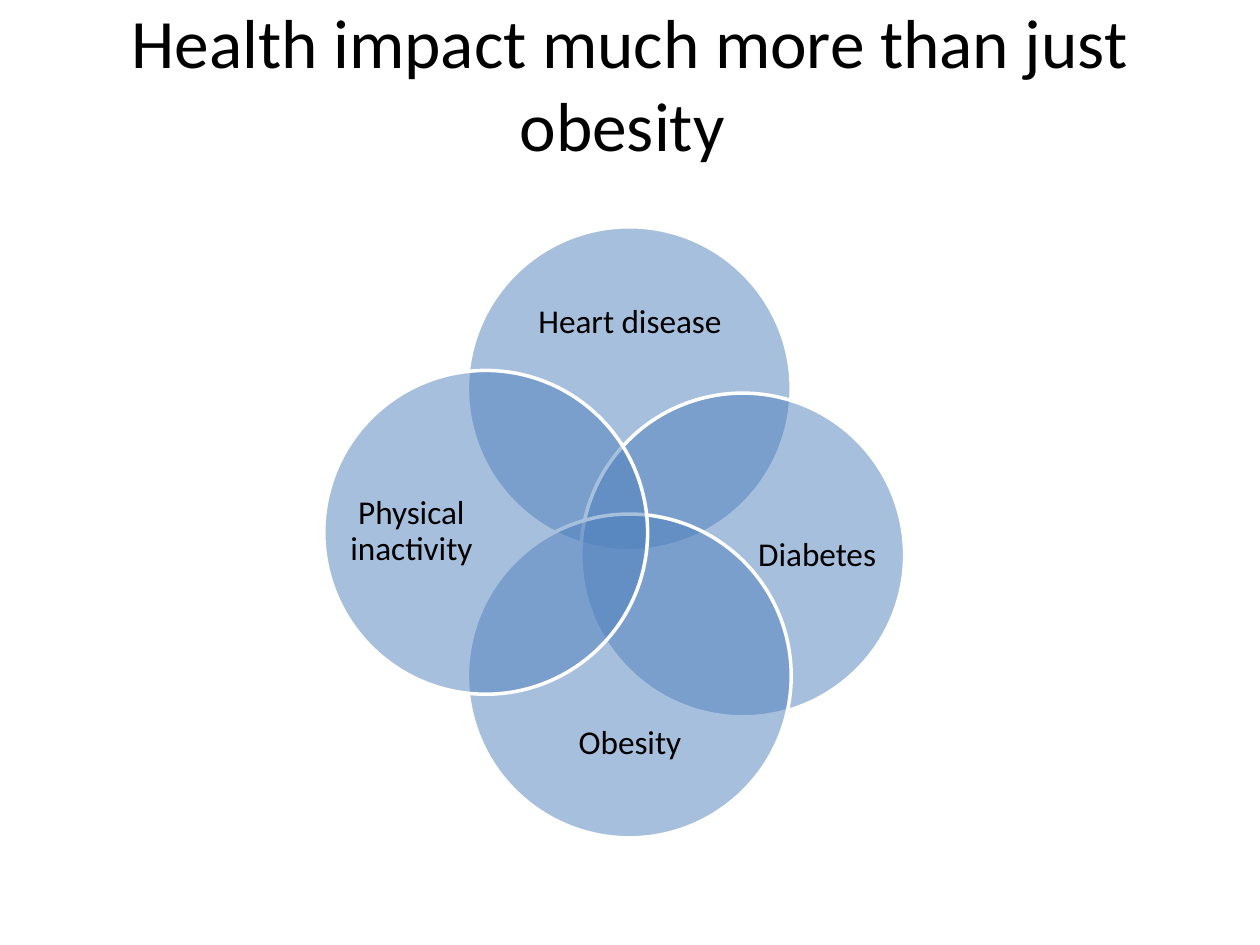
from dataclasses import dataclass

from lxml import etree
from pptx import Presentation
from pptx.dml.color import RGBColor
from pptx.enum import shapes, text
from pptx.oxml import ns
from pptx.util import Inches, Pt


@dataclass(frozen=True)
class Theme:
    font: str = "Calibri"
    ink: RGBColor = RGBColor(0, 0, 0)
    circle: RGBColor = RGBColor(0x4F, 0x81, 0xBD)
    outline: RGBColor = RGBColor(255, 255, 255)
    opacity: int = 50
    title_size: float = 39.6
    label_size: float = 19


THEME = Theme()
DIAMETER = 2.57
WIDE_LABEL = (1.98, 0.82)
TALL_LABEL = (0.99, 1.98)
CONDITIONS = [
    ("Heart disease", (3.71, 1.8), (4.01, 2.15), WIDE_LABEL),
    ("Diabetes", (4.61, 3.12), (5.99, 3.42), TALL_LABEL),
    ("Obesity", (3.71, 4.08), (4.01, 5.49), WIDE_LABEL),
    ("Physical inactivity", (2.57, 2.94), (2.77, 3.23), TALL_LABEL),
]


def inches(*lengths):
    return [Inches(length) for length in lengths]


def write_centred(text_frame, wording, size):
    text_frame.text = wording
    text_frame.word_wrap = True
    text_frame.auto_size = text.MSO_AUTO_SIZE.NONE
    text_frame.vertical_anchor = text.MSO_ANCHOR.MIDDLE
    paragraph = text_frame.paragraphs[0]
    paragraph.alignment = text.PP_ALIGN.CENTER
    font = paragraph.runs[0].font
    font.name = THEME.font
    font.size = Pt(size)
    font.color.rgb = THEME.ink
    return paragraph


def place_title(slide, wording):
    title = slide.shapes.title
    title.left, title.top, title.width, title.height = inches(0.5, 0, 9, 1.3)
    write_centred(title.text_frame, wording, THEME.title_size)


def add_circle(group, position):
    shape = group.shapes.add_shape(
        shapes.MSO_SHAPE.OVAL, *inches(*position, DIAMETER, DIAMETER)
    )
    shape.shadow.inherit = False
    shape.fill.solid()
    shape.fill.fore_color.rgb = THEME.circle
    colour = shape.fill._xPr.find(".//" + ns.qn("a:srgbClr"))
    alpha = etree.SubElement(colour, ns.qn("a:alpha"))
    alpha.set("val", str(THEME.opacity * 1000))
    shape.line.color.rgb = THEME.outline
    shape.line.width = Pt(2)


def add_label(group, wording, position, size):
    text_frame = group.shapes.add_textbox(*inches(*position, *size)).text_frame
    text_frame.margin_left = text_frame.margin_right = 0
    text_frame.margin_top = text_frame.margin_bottom = 0
    paragraph = write_centred(text_frame, wording, THEME.label_size)
    paragraph.line_spacing = 0.9


def main():
    presentation = Presentation()
    presentation.slide_width, presentation.slide_height = inches(10, 7.5)
    slide = presentation.slides.add_slide(presentation.slide_layouts[5])
    place_title(slide, "Health impact much more than just obesity ")
    venn = slide.shapes.add_group_shape()
    for wording, circle_position, label_position, label_size in CONDITIONS:
        add_circle(venn, circle_position)
        add_label(venn, wording, label_position, label_size)
    presentation.save("out.pptx")


if __name__ == "__main__":
    main()
